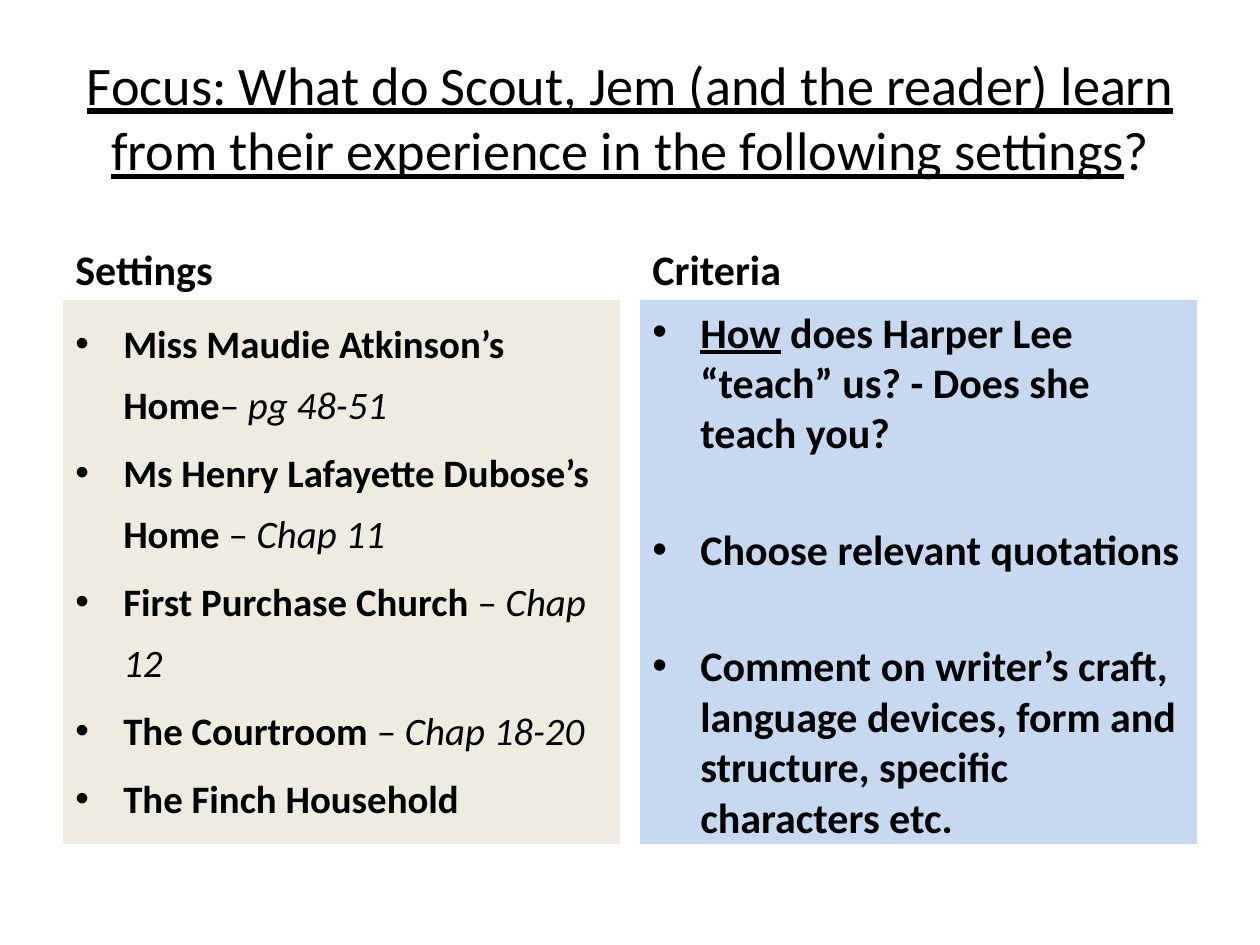
from lxml import etree
from pptx import Presentation
from pptx.dml.color import RGBColor
from pptx.enum.shapes import MSO_SHAPE
from pptx.enum.text import MSO_ANCHOR, PP_ALIGN
from pptx.oxml.ns import qn
from pptx.util import Inches, Pt

RECTANGLE = MSO_SHAPE.RECTANGLE
TOP, MIDDLE, BOTTOM = MSO_ANCHOR.TOP, MSO_ANCHOR.MIDDLE, MSO_ANCHOR.BOTTOM
LEFT, CENTER = PP_ALIGN.LEFT, PP_ALIGN.CENTER

FONT = "Calibri"
COLUMN_LEFTS = (0.5, 5.08)
COLUMN_WIDTH = 4.42
HEADING_TOP, HEADING_HEIGHT = 1.68, 0.7
PANEL_TOP, PANEL_HEIGHT = 2.38, 4.32

TITLE = [
    ("Focus: What do Scout, Jem (and the reader) learn from their experience "
     "in the following settings", "u"),
    ("?", ""),
]
SETTINGS = [
    [("Miss Maudie Atkinson’s Home", "b"), ("– ", ""), ("pg 48-51", "i")],
    [("Ms Henry Lafayette Dubose’s Home ", "b"), ("– ", ""), ("Chap 11", "i")],
    [("First Purchase Church", "b"), (" – ", ""), ("Chap 12", "i")],
    [("The Courtroom", "b"), (" – ", ""), ("Chap 18-20", "i")],
    [("The Finch Household", "b")],
]
CRITERIA = [
    [("How", "bu"), (" does Harper Lee “teach” us? - Does she teach you?", "b")],
    [("Choose relevant quotations", "b")],
    [("Comment on writer’s craft, language devices, form and structure, "
      "specific characters etc.", "b")],
]


def color(hex_string):
    return RGBColor.from_string(hex_string)


def add_bullet(para):
    properties = para._p.get_or_add_pPr()
    properties.set("marL", str(Inches(0.38)))
    properties.set("indent", str(Inches(-0.38)))
    etree.SubElement(properties, qn("a:buFont")).set("typeface", "Arial")
    etree.SubElement(properties, qn("a:buChar")).set("char", "•")


def fill_para(para, spans, size):
    """Write (text, style) spans; style letters are b, i and u."""
    para.font.name = FONT
    para.font.size = Pt(size)
    para.font.color.rgb = color("000000")
    for text, style in spans:
        span = para.add_run()
        span.text = text
        span.font.bold = "b" in style
        span.font.italic = "i" in style
        span.font.underline = "u" in style


def set_frame(box, anchor):
    frame = box.text_frame
    frame.word_wrap = True
    frame.vertical_anchor = anchor
    return frame


def add_line_box(page, left, top, width, height, spans, size, anchor, align):
    box = page.shapes.add_textbox(Inches(left), Inches(top), Inches(width), Inches(height))
    para = set_frame(box, anchor).paragraphs[0]
    para.alignment = align
    fill_para(para, spans, size)


def add_bullet_panel(page, left, fill, items, size, line_spacing, gap):
    panel = page.shapes.add_shape(RECTANGLE, Inches(left), Inches(PANEL_TOP),
                                  Inches(COLUMN_WIDTH), Inches(PANEL_HEIGHT))
    panel.shadow.inherit = False
    panel.fill.solid()
    panel.fill.fore_color.rgb = color(fill)
    panel.line.fill.background()
    frame = set_frame(panel, TOP)
    for index, spans in enumerate(items):
        para = frame.add_paragraph() if index else frame.paragraphs[0]
        para.alignment = LEFT
        para.line_spacing = line_spacing
        para.space_before = Pt(gap if index else 0)
        add_bullet(para)
        fill_para(para, spans, size)


def main():
    deck = Presentation()
    deck.slide_width, deck.slide_height = Inches(10), Inches(7.5)
    page = deck.slides.add_slide(deck.slide_layouts[6])

    add_line_box(page, 0.5, 0.3, 9, 1.25, TITLE, 31, MIDDLE, CENTER)
    columns = (
        ("Settings", "EEECE1", SETTINGS, 22.2, 1.3, 4.4),
        ("Criteria", "C6D9F1", CRITERIA, 24, 1.0, 37.8),
    )
    for left, (heading, *panel) in zip(COLUMN_LEFTS, columns):
        add_line_box(page, left, HEADING_TOP, COLUMN_WIDTH, HEADING_HEIGHT,
                     [(heading, "b")], 24, BOTTOM, LEFT)
        add_bullet_panel(page, left, *panel)

    deck.save("out.pptx")


if __name__ == "__main__":
    main()
